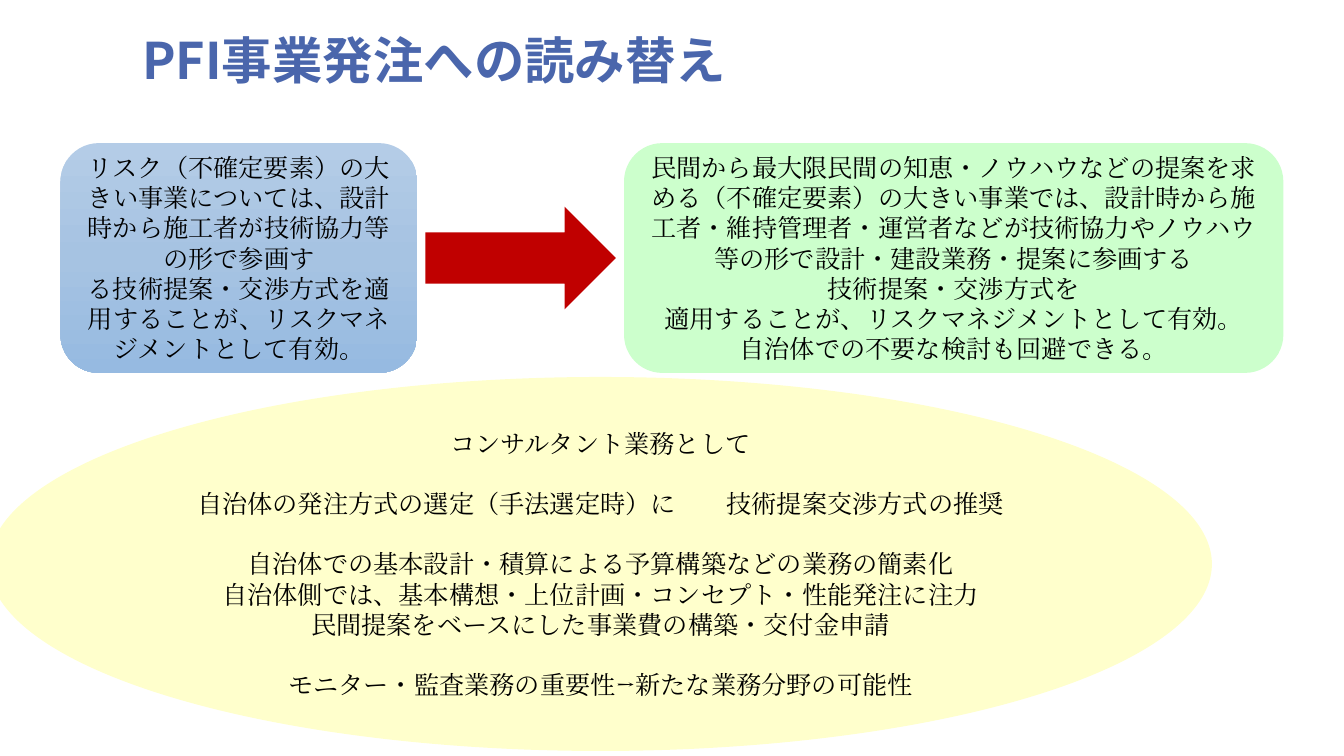
from copy import deepcopy
from dataclasses import dataclass

from pptx import Presentation
from pptx.dml.color import RGBColor
from pptx.enum.shapes import MSO_SHAPE
from pptx.enum.text import MSO_ANCHOR, PP_ALIGN
from pptx.oxml.ns import qn
from pptx.util import Inches, Pt

IDEOGRAPHIC_SPACE = "　"


@dataclass(frozen=True)
class Theme:
    title_font: str = "Noto Sans CJK JP"
    body_font: str = "Cambria"
    title_size: int = 36
    body_size: int = 18
    blank_line: float = 21.5
    title: str = "4A66AC"
    text: str = "000000"
    blue: tuple = ("B4CCE7", "A6C3E2", "96BAE1")
    green: str = "CCFFCC"
    yellow: str = "FFFFCC"
    red: str = "C00000"


def add_span(para, text, font, size, color, bold=False, spacing=0):
    span = para.add_run()
    span.text = text
    span.font.size = Pt(size)
    span.font.bold = bold
    span.font.color.rgb = RGBColor.from_string(color)
    span.font.name = font
    properties = span.font._element
    properties.set("lang", "ja-JP")
    if spacing:
        properties.set("spc", str(spacing * 100))
    east_asian = properties.makeelement(qn("a:ea"), {"typeface": font})
    properties.find(qn("a:latin")).addnext(east_asian)


class SlideBuilder:
    def __init__(self, deck, theme):
        self.theme = theme
        self.column = deck.slide_width / 100
        self.row = deck.slide_height / 100
        self.page = deck.slides.add_slide(deck.slide_layouts[5])

    def place(self, left, top, width, height):
        return (round(left * self.column), round(top * self.row),
                round(width * self.column), round(height * self.row))

    def title(self, text, *area):
        box = self.page.shapes.title
        box.left, box.top, box.width, box.height = self.place(*area)
        box.text_frame.word_wrap = True
        box.text_frame.vertical_anchor = MSO_ANCHOR.BOTTOM
        para = box.text_frame.paragraphs[0]
        para.alignment = PP_ALIGN.LEFT
        para.line_spacing = 0.8
        add_span(para, text, self.theme.title_font, self.theme.title_size,
                 self.theme.title, bold=True)

    def shape(self, kind, fill, *area):
        box = self.page.shapes.add_shape(kind, *self.place(*area))
        box.shadow.inherit = False
        box.line.fill.background()
        if isinstance(fill, tuple):
            self.gradient(box, fill)
        else:
            box.fill.solid()
            box.fill.fore_color.rgb = RGBColor.from_string(fill)
        return box

    def gradient(self, box, colors):
        box.fill.gradient()
        box.fill.gradient_angle = 270
        stop_list = next(box.element.iter(qn("a:gsLst")))
        stop_list.insert(1, deepcopy(stop_list[0]))
        for index, (stop, color) in enumerate(zip(box.fill.gradient_stops, colors)):
            stop.position = index / (len(colors) - 1)
            stop.color.rgb = RGBColor.from_string(color)

    def text_shape(self, kind, fill, groups, *area):
        frame = self.shape(kind, fill, *area).text_frame
        frame.word_wrap = True
        frame.vertical_anchor = MSO_ANCHOR.MIDDLE
        para = None
        for group in groups:
            for index, line in enumerate(group):
                starts_group = para is not None and index == 0
                para = frame.add_paragraph() if para is not None else frame.paragraphs[0]
                para.alignment = PP_ALIGN.CENTER
                if starts_group:
                    para.space_before = Pt(self.theme.blank_line)
                self.line(para, line)

    def line(self, para, text):
        style = (self.theme.body_font, self.theme.body_size, self.theme.text)
        before, gap, after = text.partition(IDEOGRAPHIC_SPACE)
        add_span(para, before, *style)
        if gap:
            add_span(para, gap, *style, spacing=self.theme.body_size)
            add_span(para, after, *style)


def main():
    deck = Presentation()
    deck.slide_width, deck.slide_height = Inches(13.33), Inches(7.5)
    theme = Theme()
    slide = SlideBuilder(deck, theme)

    top, height = 18.93, 30.4
    left, left_width = 4.5, 26.55
    right, right_width = 46.43, 49.06
    gap, arrow_height = 0.6, 13.6
    arrow_left = left + left_width + gap

    slide.title("PFI事業発注への読み替え", 9.83, 2.8, 71.27, 9.73)
    slide.text_shape(MSO_SHAPE.ROUNDED_RECTANGLE, theme.blue, [[
        "リスク（不確定要素）の大きい事業については、設計時から施工者が技術協力等の形で参画す",
        "る技術提案・交渉方式を適用することが、リスクマネジメントとして有効。",
    ]], left, top, left_width, height)
    slide.text_shape(MSO_SHAPE.ROUNDED_RECTANGLE, theme.green, [[
        "民間から最大限民間の知恵・ノウハウなどの提案を求める（不確定要素）の大きい事業では、"
        "設計時から施工者・維持管理者・運営者などが技術協力やノウハウ等の形で"
        "設計・建設業務・提案に参画する",
        "技術提案・交渉方式を",
        "適用することが、リスクマネジメントとして有効。",
        "自治体での不要な検討も回避できる。",
    ]], right, top, right_width, height)
    slide.shape(MSO_SHAPE.RIGHT_ARROW, theme.red, arrow_left,
                top + (height - arrow_height) / 2,
                right - gap - arrow_left, arrow_height)
    slide.text_shape(MSO_SHAPE.OVAL, theme.yellow, [
        ["コンサルタント業務として"],
        ["自治体の発注方式の選定（手法選定時）に　技術提案交渉方式の推奨"],
        ["自治体での基本設計・積算による予算構築などの業務の簡素化",
         "自治体側では、基本構想・上位計画・コンセプト・性能発注に注力",
         "民間提案をベースにした事業費の構築・交付金申請"],
        ["モニター・監査業務の重要性→新たな業務分野の可能性"],
    ], -0.83, 49.87, 91, 49.47)

    deck.save("out.pptx")


if __name__ == "__main__":
    main()
